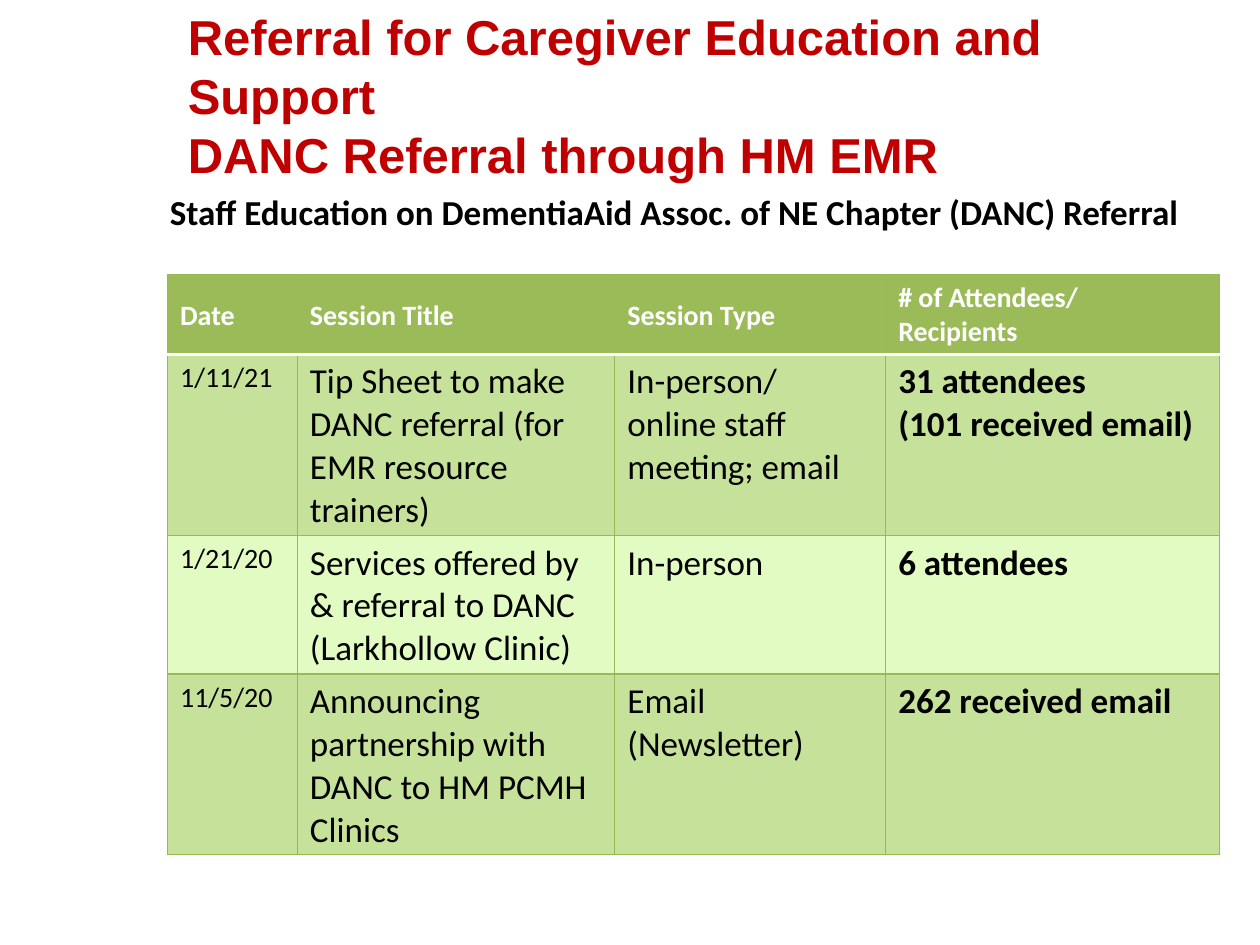
from lxml import etree
from pptx import Presentation
from pptx.dml.color import RGBColor
from pptx.enum.text import MSO_ANCHOR as Anchor, MSO_AUTO_SIZE as AutoSize, PP_ALIGN as Align
from pptx.oxml.ns import qn
from pptx.util import Inches, Pt

NBSP = chr(160)
COLUMN_WIDTHS = [1.03, 2.52, 2.15, 2.65]
ROW_HEIGHTS = [0.63, 1.44, 1.1, 1.43]
SESSIONS = [
    ["Date", "Session Title", "Session Type", f"# of Attendees/ Recipients{NBSP}"],
    ["1/11/21", "Tip Sheet to make DANC referral (for EMR resource trainers)",
     "In-person/ online staff meeting; email", f"31 attendees (101{NBSP}received email)"],
    ["1/21/20", "Services offered by & referral to DANC (Larkhollow Clinic)",
     "In-person", "6 attendees"],
    ["11/5/20", "Announcing partnership with DANC to HM PCMH Clinics",
     "Email (Newsletter)", f"262{NBSP}received email"],
]


def color(hex_value):
    return RGBColor.from_string(hex_value)


def write(frame, text, *, size, font="Calibri", ink="000000", bold=False, anchor=Anchor.TOP):
    frame.word_wrap = True
    frame.vertical_anchor = anchor
    frame.text = text
    for paragraph in frame.paragraphs:
        paragraph.alignment = Align.LEFT
        for run in paragraph.runs:
            run.font.size = Pt(size)
            run.font.name = font
            run.font.bold = bold
            run.font.color.rgb = color(ink)


class ReferralSlide:
    accent = "C00000"
    header_fill = "9BBB59"
    band_fills = ["C6E29A", "E2FBC2"]
    rule = "98B955"

    def __init__(self, deck):
        self.slide = deck.slides.add_slide(deck.slide_layouts[5])

    def title(self, text, left, top, width, height):
        heading = self.slide.shapes.title
        heading.left, heading.top = Inches(left), Inches(top)
        heading.width, heading.height = Inches(width), Inches(height)
        write(heading.text_frame, text, size=28, font="Arial", ink=self.accent,
              bold=True, anchor=Anchor.MIDDLE)
        heading.text_frame.auto_size = AutoSize.NONE

    def subtitle(self, text, left, top, width, height):
        caption = self.slide.shapes.add_textbox(
            Inches(left), Inches(top), Inches(width), Inches(height))
        write(caption.text_frame, text, size=20, bold=True)

    def border(self, cell, side, hex_value, width):
        properties = cell._tc.get_or_add_tcPr()
        line = etree.SubElement(properties, qn(f"a:ln{side}"), w=str(Pt(width)))
        fill = etree.SubElement(line, qn("a:solidFill"))
        etree.SubElement(fill, qn("a:srgbClr"), val=hex_value)

    def style_cell(self, cell, row, column, text):
        is_header = row == 0
        for side in "LRTB":
            under_header = (row, side) in [(0, "B"), (1, "T")]
            self.border(cell, side, *(("FFFFFF", 2) if under_header else (self.rule, 0.75)))
        cell.fill.solid()
        cell.fill.fore_color.rgb = color(
            self.header_fill if is_header else self.band_fills[(row - 1) % 2])
        write(cell.text_frame, text,
              size=16 if is_header or column == 0 else 20,
              ink="FFFFFF" if is_header else "000000",
              bold=is_header or column == 3)
        cell.margin_bottom = Inches(0.02)
        cell.vertical_anchor = Anchor.MIDDLE if is_header and column < 3 else Anchor.TOP

    def table(self, rows, left, top):
        sessions = self.slide.shapes.add_table(
            len(rows), len(COLUMN_WIDTHS), Inches(left), Inches(top),
            Inches(sum(COLUMN_WIDTHS)), Inches(sum(ROW_HEIGHTS))).table
        for column, width in zip(sessions.columns, COLUMN_WIDTHS):
            column.width = Inches(width)
        for row, height in zip(sessions.rows, ROW_HEIGHTS):
            row.height = Inches(height)
        for row, texts in enumerate(rows):
            for column, text in enumerate(texts):
                self.style_cell(sessions.cell(row, column), row, column, text)


def main():
    deck = Presentation()
    deck.slide_width, deck.slide_height = Inches(10), Inches(7.5)
    referral = ReferralSlide(deck)
    referral.title("Referral for Caregiver Education and Support\nDANC Referral through HM EMR",
                   1.39, 0, 8.36, 1.51)
    referral.table(SESSIONS, 1.33, 2.18)
    referral.subtitle("Staff Education on DementiaAid Assoc. of NE Chapter (DANC) Referral",
                      1.25, 1.46, 8.42, 0.44)
    deck.save("out.pptx")


if __name__ == "__main__":
    main()
